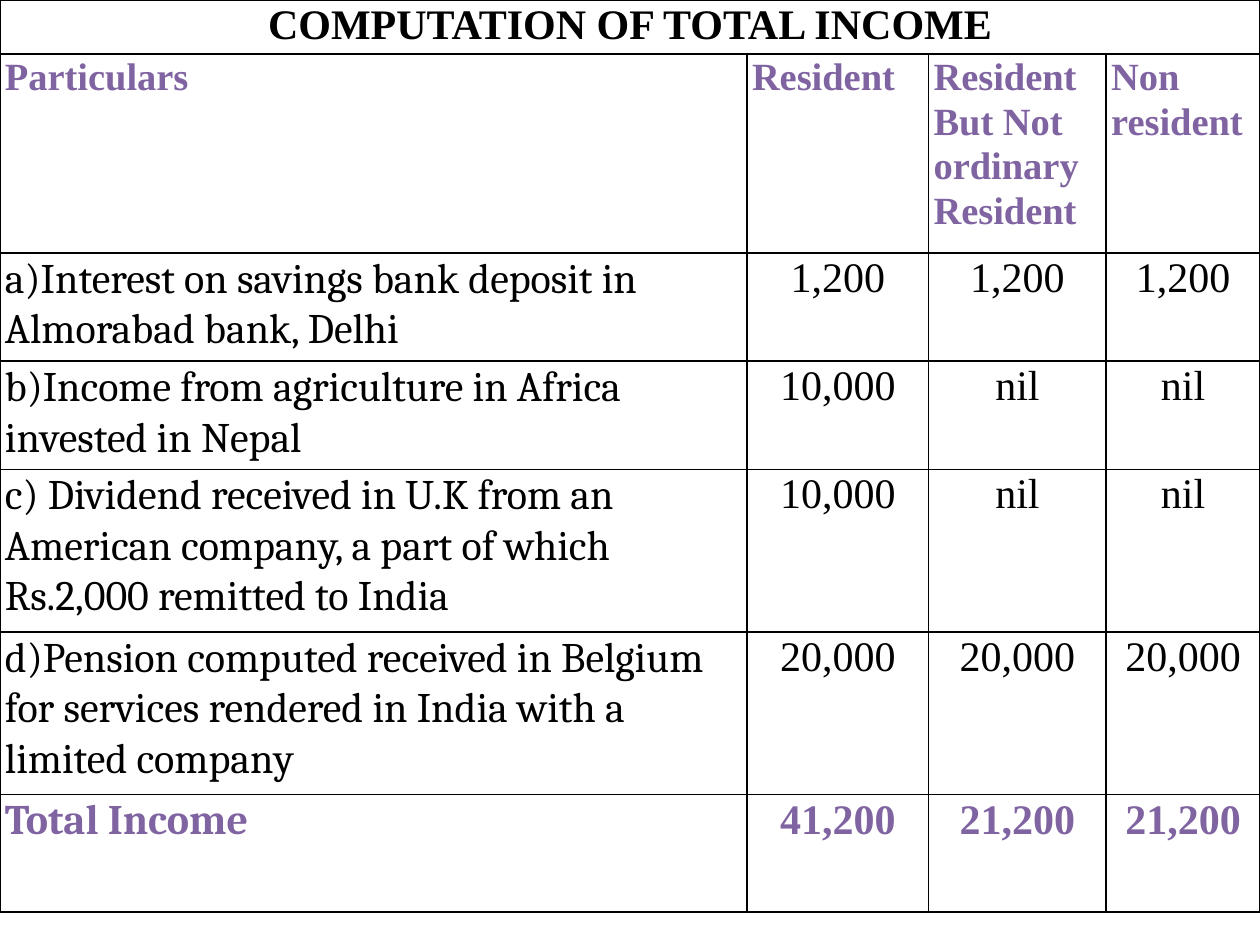
"""Build a slide with a table computing total income by residential status."""
from dataclasses import dataclass

from lxml import etree
from pptx import Presentation
from pptx.dml.color import RGBColor
from pptx.enum.text import PP_ALIGN
from pptx.oxml.ns import qn
from pptx.util import Cm, Pt

LEFT, CENTER = PP_ALIGN.LEFT, PP_ALIGN.CENTER


@dataclass(frozen=True)
class Theme:
    text: str = "000000"
    accent: str = "8064A2"
    border: str = "000000"
    body_size: int = 24
    header_size: int = 22
    serif: str = "Times New Roman"
    label: str = "Cambria"


theme = Theme()


def add_borders(cell):
    properties = cell._tc.get_or_add_tcPr()
    for index, side in enumerate(("lnL", "lnR", "lnT", "lnB")):
        line = etree.Element(qn(f"a:{side}"), w=str(Pt(1)))
        fill = etree.SubElement(line, qn("a:solidFill"))
        etree.SubElement(fill, qn("a:srgbClr"), val=theme.border)
        properties.insert(index, line)


def write_cell(cell, text, alignment, font_name, size, color, bold):
    cell.text_frame.text = text
    paragraph = cell.text_frame.paragraphs[0]
    paragraph.alignment = alignment
    paragraph.line_spacing = 1.05
    for run in paragraph.runs:
        run.font.name = font_name
        run.font.size = Pt(size)
        run.font.bold = bold
        run.font.color.rgb = RGBColor.from_string(color)


column_widths = [15.06, 3.66, 3.58, 3.1]
row_heights = [1.09, 4.01, 2.18, 2.18, 3.28, 3.28, 2.36]
headers = ["Particulars", "Resident", "Resident But Not ordinary Resident", "Non resident"]
income_rows = [
    ["a)Interest on savings bank deposit in Almorabad bank, Delhi", "1,200", "1,200", "1,200"],
    ["b)Income from agriculture in Africa invested in Nepal", "10,000", "nil", "nil"],
    ["c) Dividend received in U.K from an American company, a part of which "
     "Rs.2,000 remitted to India", "10,000", "nil", "nil"],
    ["d)Pension computed received in Belgium for services rendered in India "
     "with a limited company", "20,000", "20,000", "20,000"],
    ["Total Income", "41,200", "21,200", "21,200"],
]

presentation = Presentation()
presentation.slide_width = Cm(25.4)
presentation.slide_height = Cm(19.05)
slide = presentation.slides.add_slide(presentation.slide_layouts[6])

table = slide.shapes.add_table(
    len(row_heights), len(column_widths), Cm(0), Cm(0),
    Cm(sum(column_widths)), Cm(sum(row_heights)),
).table
table.first_row = False
table.horz_banding = False
for column, width in zip(table.columns, column_widths):
    column.width = Cm(width)
for row, height in zip(table.rows, row_heights):
    row.height = Cm(height)

for cell in table.iter_cells():
    cell.margin_left = cell.margin_right = Cm(0.1)
    cell.margin_top = cell.margin_bottom = Cm(0)
    cell.fill.background()
    add_borders(cell)

title_cell = table.cell(0, 0)
title_cell.merge(table.cell(0, len(column_widths) - 1))
write_cell(title_cell, "COMPUTATION OF TOTAL INCOME", CENTER,
           theme.serif, theme.body_size, theme.text, True)

for column_index, header in enumerate(headers):
    write_cell(table.cell(1, column_index), header, LEFT,
               theme.serif, theme.header_size, theme.accent, True)

for row_index, values in enumerate(income_rows, start=2):
    is_total = row_index == len(row_heights) - 1
    color = theme.accent if is_total else theme.text
    for column_index, value in enumerate(values):
        alignment, font_name = (CENTER, theme.serif) if column_index else (LEFT, theme.label)
        write_cell(table.cell(row_index, column_index), value, alignment,
                   font_name, theme.body_size, color, is_total)

presentation.save("out.pptx")
